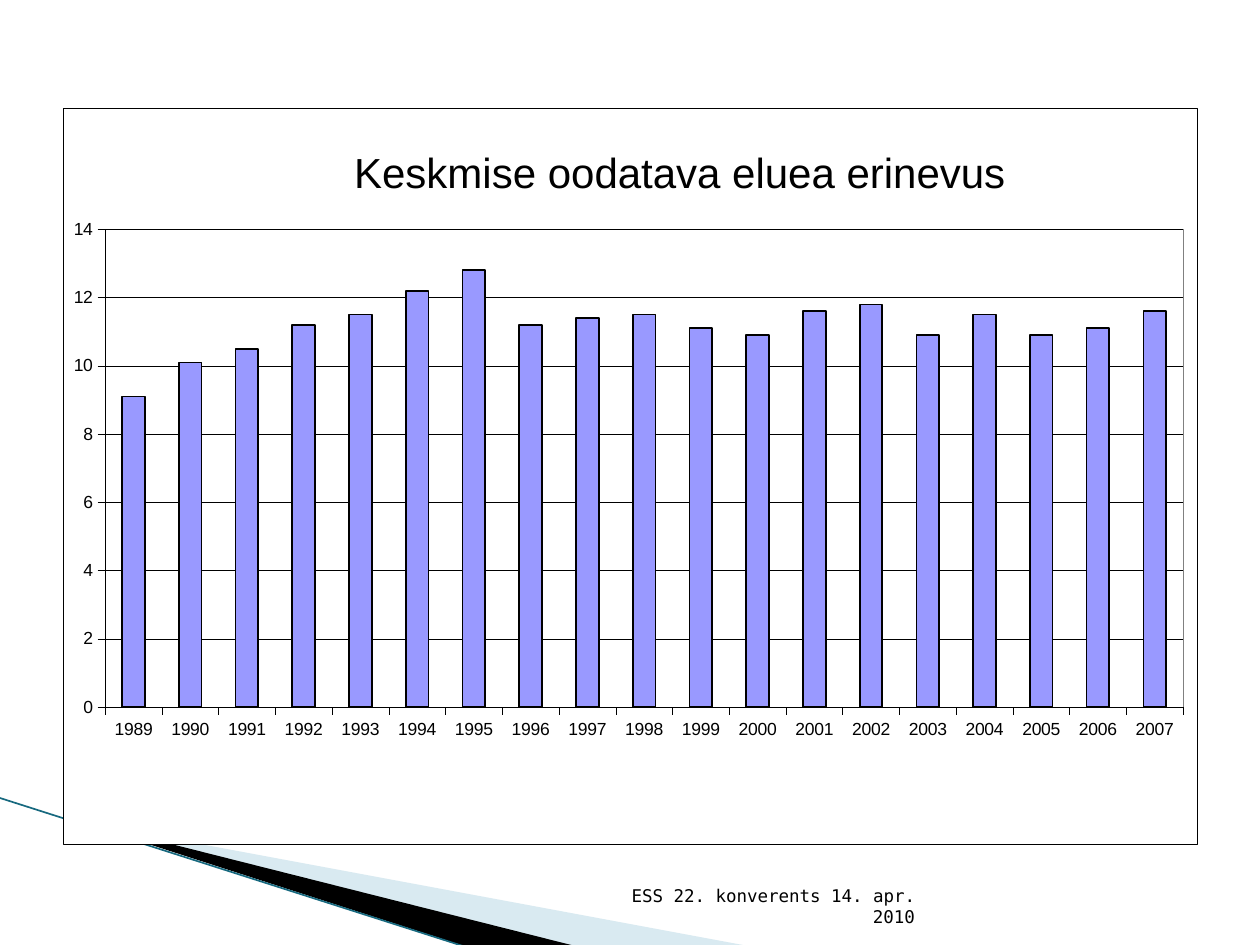
from dataclasses import dataclass

import lxml.etree
import pptx
import pptx.chart.data
import pptx.dml.color
import pptx.enum.chart
import pptx.enum.shapes
import pptx.enum.text
import pptx.oxml
import pptx.oxml.ns
import pptx.util

Pt = pptx.util.Pt
qn = pptx.oxml.ns.qn
BLACK = "000000"
WHITE = "FFFFFF"
FONT = "Arial"
NAMESPACES = pptx.oxml.ns.nsdecls("c", "a")
FIRST_YEAR = 1989
LIFE_GAPS = (9.1, 10.1, 10.5, 11.2, 11.5, 12.2, 12.8, 11.2, 11.4, 11.5,
             11.1, 10.9, 11.6, 11.8, 10.9, 11.5, 10.9, 11.1, 11.6)


@dataclass(frozen=True)
class Wedge:
    points: tuple[tuple[float, float], ...]
    color: str
    opacity: int = 100


WEDGES = (
    Wedge(((39.6, 468.4), (428.4, 540.7), (328.3, 540.7)), "A0CBDC", 40),
    Wedge(((38.2, 467.3), (329, 540.7), (267.8, 541.4)), BLACK),
)


def rgb(color: str) -> pptx.dml.color.RGBColor:
    return pptx.dml.color.RGBColor.from_string(color)


def set_font(font, size: float, name: str = FONT) -> None:
    font.size = Pt(size)
    font.name = name
    font.bold = False
    font.color.rgb = rgb(BLACK)


def set_line(line, color: str, width: float) -> None:
    line.color.rgb = rgb(color)
    line.width = Pt(width)


def draw_wedge(slide, wedge: Wedge) -> None:
    corners = [(Pt(x), Pt(y)) for x, y in wedge.points]
    builder = slide.shapes.build_freeform(*corners[0], scale=1.0)
    builder.add_line_segments(corners[1:], close=True)
    shape = builder.convert_to_shape()
    shape.shadow.inherit = False
    shape.fill.solid()
    shape.fill.fore_color.rgb = rgb(wedge.color)
    shape.line.fill.background()
    if wedge.opacity < 100:
        tint = shape.element.spPr.find(qn("a:solidFill"))[0]
        alpha = lxml.etree.SubElement(tint, qn("a:alpha"))
        alpha.set("val", str(wedge.opacity * 1000))


def draw_edge(slide) -> None:
    edge = slide.shapes.add_connector(
        pptx.enum.shapes.MSO_CONNECTOR.STRAIGHT, Pt(-0.7), Pt(455.8), Pt(267.1), Pt(541.4))
    set_line(edge.line, "17697F", 0.95)
    lxml.etree.SubElement(edge.element.spPr, qn("a:effectLst"))


def frame_xml(border: str):
    return pptx.oxml.parse_xml(
        f'<c:spPr {NAMESPACES}><a:solidFill><a:srgbClr val="{WHITE}"/></a:solidFill>'
        f'<a:ln w="{Pt(0.25)}"><a:solidFill><a:srgbClr val="{border}"/></a:solidFill></a:ln></c:spPr>')


def set_layout(parent, index: int, inner: bool, **place: float) -> None:
    for old in parent.findall(qn("c:layout")):
        parent.remove(old)
    target = '<c:layoutTarget val="inner"/>' if inner else ""
    modes = "".join(f'<c:{key}Mode val="edge"/>' for key in ("x", "y"))
    values = "".join(f'<c:{key} val="{value}"/>' for key, value in place.items())
    parent.insert(index, pptx.oxml.parse_xml(
        f'<c:layout {NAMESPACES}><c:manualLayout>{target}{modes}{values}'
        '</c:manualLayout></c:layout>'))


def format_axis(axis) -> None:
    axis.major_tick_mark = pptx.enum.chart.XL_TICK_MARK.OUTSIDE
    axis.minor_tick_mark = pptx.enum.chart.XL_TICK_MARK.NONE
    set_font(axis.tick_labels.font, 10)
    set_line(axis.format.line, BLACK, 0.25)


def draw_chart(slide) -> None:
    data = pptx.chart.data.CategoryChartData()
    data.categories = [str(FIRST_YEAR + i) for i in range(len(LIFE_GAPS))]
    data.add_series("Series 1", LIFE_GAPS)
    chart = slide.shapes.add_chart(
        pptx.enum.chart.XL_CHART_TYPE.COLUMN_CLUSTERED,
        Pt(36), Pt(62), Pt(648), Pt(420.5), data).chart
    set_font(chart.font, 10)
    chart.has_legend = False
    chart.has_title = True
    heading = chart.chart_title.text_frame
    heading.text = "Keskmise oodatava eluea erinevus"
    set_font(heading.paragraphs[0].runs[0].font, 24)
    set_layout(chart.chart_title.element, 1, False, x=0.25, y=0.04)

    format_axis(chart.category_axis)
    gap_axis = chart.value_axis
    format_axis(gap_axis)
    gap_axis.minimum_scale = 0
    gap_axis.maximum_scale = 14
    gap_axis.major_unit = 2
    gap_axis.has_major_gridlines = True
    set_line(gap_axis.major_gridlines.format.line, BLACK, 0.25)

    columns = chart.plots[0]
    columns.gap_width = 150
    columns.vary_by_categories = False
    series = columns.series[0]
    series.format.fill.solid()
    series.format.fill.fore_color.rgb = rgb("9999FF")
    set_line(series.format.line, BLACK, 1)

    chart_element = chart.element.find(qn("c:chart"))
    chart_element.addnext(frame_xml(BLACK))
    plot_area = chart_element.find(qn("c:plotArea"))
    set_layout(plot_area, 0, True, x=0.037, y=0.164, w=0.951, h=0.65)
    plot_area.append(frame_xml("808080"))


def draw_footer(slide) -> None:
    footer = slide.shapes.add_textbox(Pt(344.9), Pt(504.7), Pt(185), Pt(28.8)).text_frame
    footer.word_wrap = True
    footer.vertical_anchor = pptx.enum.text.MSO_ANCHOR.BOTTOM
    footer.text = "ESS 22. konverents 14. apr. 2010"
    line = footer.paragraphs[0]
    line.alignment = pptx.enum.text.PP_ALIGN.RIGHT
    set_font(line.runs[0].font, 10, "DejaVu Sans Mono")


def main() -> None:
    deck = pptx.Presentation()
    deck.slide_width = Pt(720)
    deck.slide_height = Pt(540)
    slide = deck.slides.add_slide(deck.slide_layouts[6])
    for wedge in WEDGES:
        draw_wedge(slide, wedge)
    draw_edge(slide)
    draw_chart(slide)
    draw_footer(slide)
    deck.save("out.pptx")


if __name__ == "__main__":
    main()
